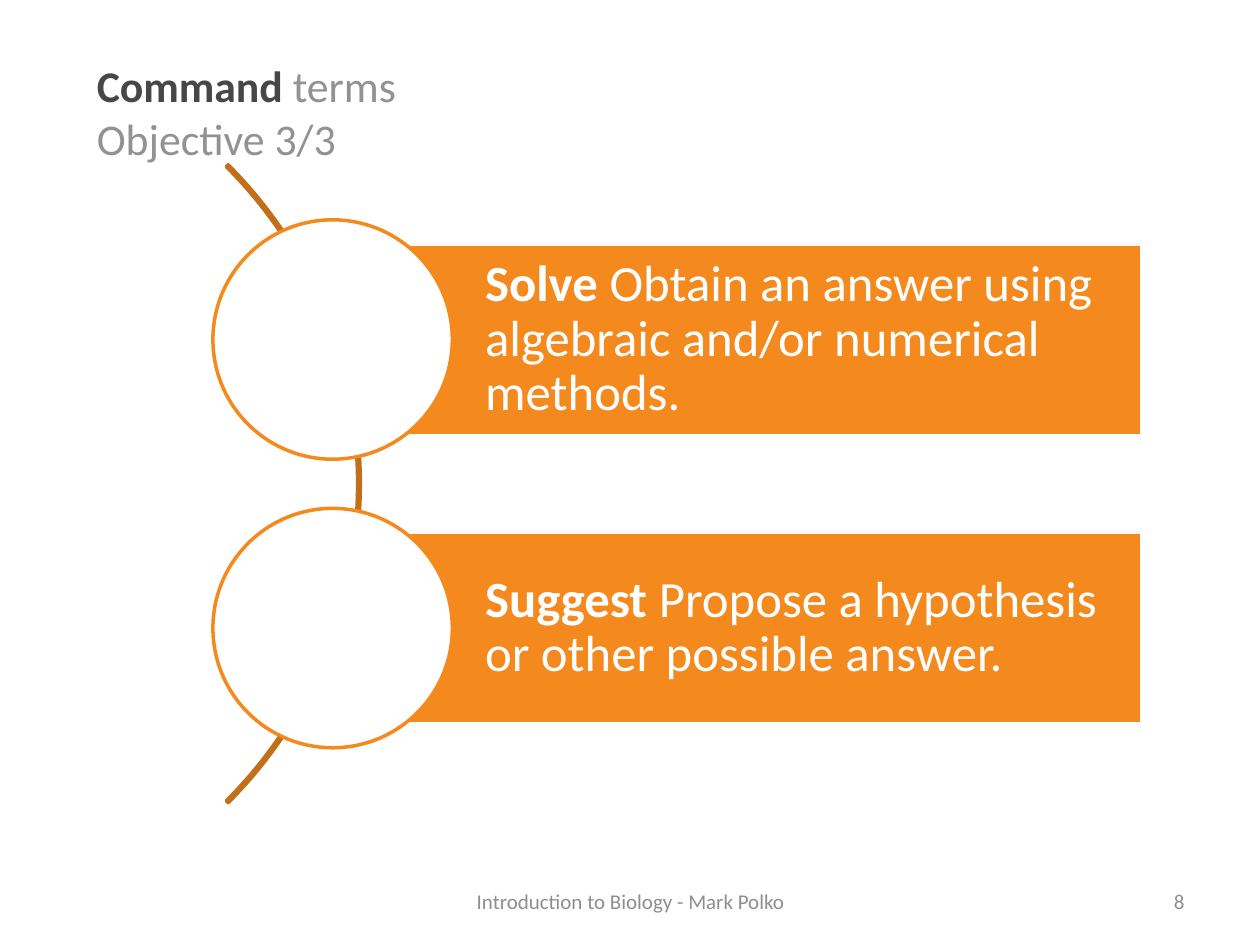
import pptx
import pptx.dml.color
import pptx.enum.shapes
import pptx.enum.text
import pptx.util

WIDTH, HEIGHT = 10, 7.5
ORANGE, DARK_ORANGE, WHITE = "F4891E", "C36E18", "FFFFFF"
DARK_GREY, GREY, FOOTER_GREY = "474747", "929292", "8E8E8E"

CENTRE_Y = 0.512 * HEIGHT
ROW_PITCH = 2.29
BAR_LEFT, BAR_WIDTH, BAR_HEIGHT = 2.64, 6.42, 1.52
CIRCLE_SIZE = 1.9
ARC_RIGHT, ARC_SIZE = 2.86, 7.16
FOOTER_TOP, FOOTER_HEIGHT = 6.95, 0.4

TERMS = [
    ("Solve", " Obtain an answer using algebraic and/or numerical methods."),
    ("Suggest", " Propose a hypothesis or other possible answer."),
]

SHAPES = pptx.enum.shapes.MSO_SHAPE
ALIGN = pptx.enum.text.PP_ALIGN
ANCHOR = pptx.enum.text.MSO_ANCHOR


def set_colour(colour_format, value):
    colour_format.rgb = pptx.dml.color.RGBColor.from_string(value)


def inches(*lengths):
    return [pptx.util.Inches(length) for length in lengths]


def add_run(paragraph, text, size, colour, bold=False):
    run = paragraph.add_run()
    run.text = text
    run.font.name = "Calibri"
    run.font.size = pptx.util.Pt(size)
    run.font.bold = bold
    set_colour(run.font.color, colour)


def add_outlined_shape(slide, kind, box, line, fill=None):
    shape = slide.shapes.add_shape(kind, *inches(*box))
    shape.shadow.inherit = False
    if fill:
        shape.fill.solid()
        set_colour(shape.fill.fore_color, fill)
    else:
        shape.fill.background()
    set_colour(shape.line.color, line)
    shape.line.width = pptx.util.Pt(2)
    return shape


def add_text_box(slide, box, anchor, align):
    """Add a wrapping text box and return its first paragraph."""
    frame = slide.shapes.add_textbox(*inches(*box)).text_frame
    frame.word_wrap = True
    frame.vertical_anchor = anchor
    frame.paragraphs[0].alignment = align
    return frame.paragraphs[0]


def add_title(slide):
    paragraph = add_text_box(slide, (0.67, 0.42, 8.67, 0.77), ANCHOR.TOP, ALIGN.LEFT)
    add_run(paragraph, "Command ", 25, DARK_GREY, bold=True)
    add_run(paragraph, "terms", 25, GREY)
    paragraph.add_line_break()
    add_run(paragraph, "Objective 3/3", 25, GREY)


def add_arc(slide):
    box = (ARC_RIGHT - ARC_SIZE, CENTRE_Y - ARC_SIZE / 2, ARC_SIZE, ARC_SIZE)
    arc = add_outlined_shape(slide, SHAPES.BLOCK_ARC, box, DARK_ORANGE)
    for index, value in enumerate((189, 27, 0.003)):
        arc.adjustments[index] = value


def add_term(slide, middle, term, definition):
    """Add a bar with its text and the circle over its left end."""
    box = (BAR_LEFT, middle - BAR_HEIGHT / 2, BAR_WIDTH, BAR_HEIGHT)
    bar = add_outlined_shape(slide, SHAPES.RECTANGLE, box, WHITE, ORANGE)
    frame = bar.text_frame
    frame.word_wrap = True
    frame.vertical_anchor = ANCHOR.MIDDLE
    frame.margin_left = pptx.util.Inches(1.21)
    frame.margin_right = frame.margin_top = frame.margin_bottom = pptx.util.Inches(0.08)
    paragraph = frame.paragraphs[0]
    paragraph.alignment = ALIGN.LEFT
    paragraph.line_spacing = 0.9
    add_run(paragraph, term, 29, WHITE, bold=True)
    add_run(paragraph, definition, 29, WHITE)

    radius = CIRCLE_SIZE / 2
    box = (BAR_LEFT - radius, middle - radius, CIRCLE_SIZE, CIRCLE_SIZE)
    add_outlined_shape(slide, SHAPES.OVAL, box, ORANGE, WHITE)


def add_footer(slide, left, width, text, align):
    box = (left, FOOTER_TOP, width, FOOTER_HEIGHT)
    paragraph = add_text_box(slide, box, ANCHOR.MIDDLE, align)
    add_run(paragraph, text, 12, FOOTER_GREY)


def main():
    presentation = pptx.Presentation()
    presentation.slide_width, presentation.slide_height = inches(WIDTH, HEIGHT)
    slide = presentation.slides.add_slide(presentation.slide_layouts[6])
    add_title(slide)
    add_arc(slide)
    for row, (term, definition) in enumerate(TERMS):
        middle = CENTRE_Y + (row - (len(TERMS) - 1) / 2) * ROW_PITCH
        add_term(slide, middle, term, definition)
    add_footer(slide, 3.42, 3.17, "Introduction to Biology - Mark Polko", ALIGN.CENTER)
    add_footer(slide, 7.17, 2.33, "8", ALIGN.RIGHT)
    presentation.save("out.pptx")


if __name__ == "__main__":
    main()
